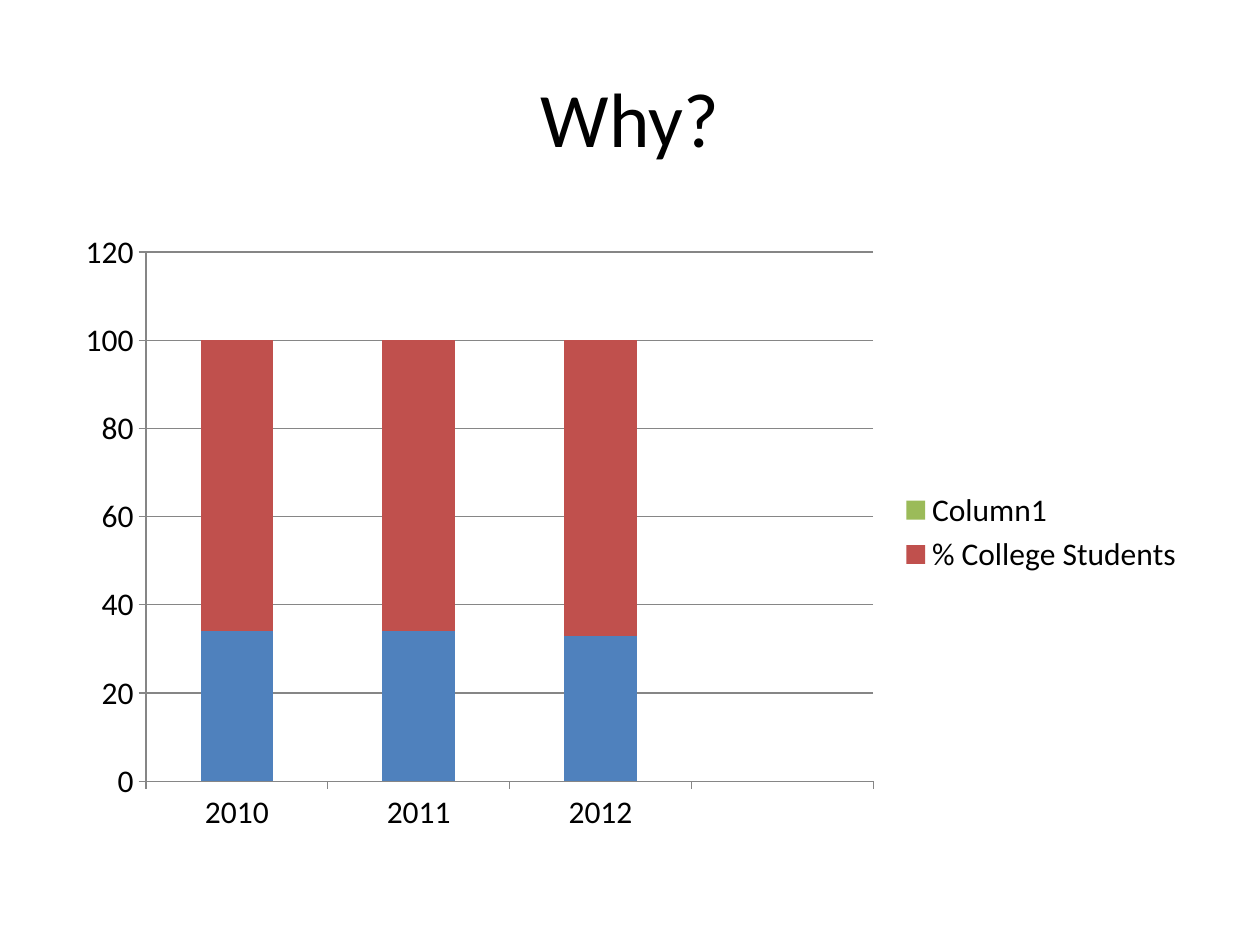
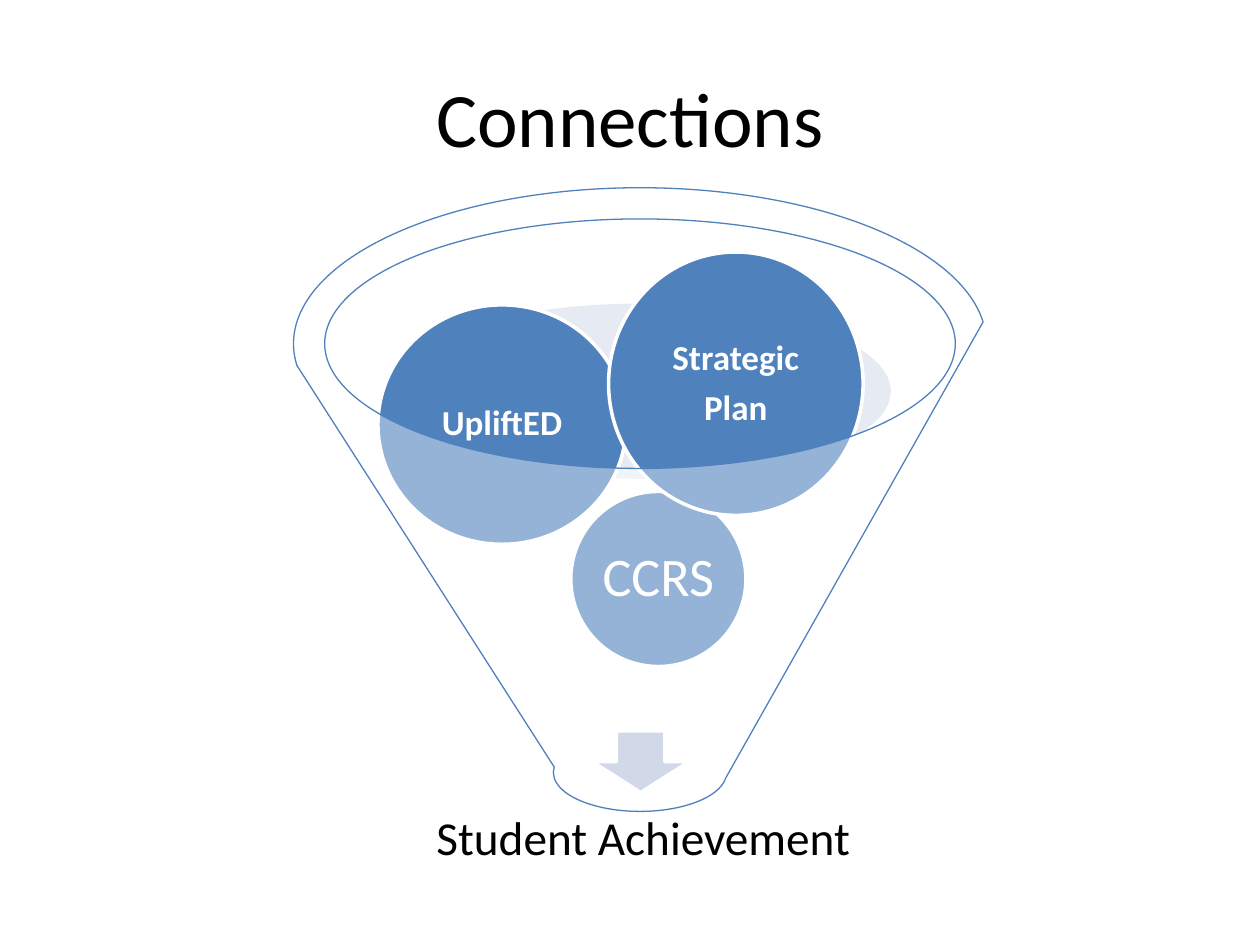
"""Build two slides: a stacked column chart and a funnel of connected initiatives."""
from dataclasses import dataclass

from lxml.etree import SubElement
from pptx import Presentation
from pptx.chart.data import CategoryChartData
from pptx.dml.color import RGBColor
from pptx.enum.chart import XL_CHART_TYPE, XL_LEGEND_POSITION, XL_TICK_MARK
from pptx.enum.shapes import MSO_SHAPE
from pptx.enum.text import MSO_ANCHOR, PP_ALIGN
from pptx.oxml import parse_xml
from pptx.oxml.ns import nsdecls, qn
from pptx.util import Inches, Pt


@dataclass(frozen=True)
class Theme:
    font: str = "Calibri"
    black: RGBColor = RGBColor(0x00, 0x00, 0x00)
    white: RGBColor = RGBColor(0xFF, 0xFF, 0xFF)
    blue: RGBColor = RGBColor(0x4F, 0x81, 0xBD)
    red: RGBColor = RGBColor(0xC0, 0x50, 0x4D)
    green: RGBColor = RGBColor(0x9B, 0xBB, 0x59)
    axis: RGBColor = RGBColor(0x86, 0x86, 0x86)
    arrow: RGBColor = RGBColor(0xB3, 0xC1, 0xDB)
    rim: RGBColor = RGBColor(0xC2, 0xCD, 0xE1)
    title_size: int = 44
    chart_size: int = 18
    acronym_size: int = 31
    outcome_size: int = 27
    initiative_size: int = 20


theme = Theme()


def write(shape, lines, size, color, bold=False, spacing=0.9):
    frame = shape.text_frame
    frame.text = "\n".join(lines)
    frame.word_wrap = False
    frame.vertical_anchor = MSO_ANCHOR.MIDDLE
    for paragraph in frame.paragraphs:
        paragraph.alignment = PP_ALIGN.CENTER
        paragraph.line_spacing = spacing
        paragraph.font.name = theme.font
        paragraph.font.size = Pt(size)
        paragraph.font.bold = bold
        paragraph.font.color.rgb = color
    for paragraph in frame.paragraphs[:-1]:
        paragraph.space_after = Pt(0.35 * size)


def add_part(slide, preset, box, fill, line=None, width=2, opacity=None):
    part = slide.shapes.add_shape(preset, *map(Inches, box))
    part.shadow.inherit = False
    part.fill.solid()
    part.fill.fore_color.rgb = fill
    if opacity:
        color = part.fill._xPr.find(qn("a:solidFill"))[0]
        SubElement(color, qn("a:alpha"), val=str(opacity * 1000))
    if line is None:
        part.line.fill.background()
    else:
        part.line.color.rgb = line
        part.line.width = Pt(width)
    return part


presentation = Presentation()
presentation.slide_width = Inches(10)
presentation.slide_height = Inches(7.5)
blank = presentation.slide_layouts[6]

slides = []
for heading in ("Why?", "Connections"):
    slide = presentation.slides.add_slide(blank)
    title = slide.shapes.add_textbox(Inches(0.5), Inches(0.3), Inches(9), Inches(1.25))
    write(title, [heading], theme.title_size, theme.black, spacing=1.0)
    title.text_frame.word_wrap = True
    slides.append(slide)
why, connections = slides

readiness = CategoryChartData()
readiness.categories = ["2010", "2011", "2012", ""]
readiness.add_series("Series 1", [34, 34, 33, None])
readiness.add_series("% College Students", [66, 66, 67, None])
readiness.add_series("Column1", [None] * 4)
chart = why.shapes.add_chart(
    XL_CHART_TYPE.COLUMN_STACKED, Inches(0.5), Inches(1.75), Inches(9), Inches(4.95), readiness
).chart
chart.has_title = False
chart.font.name = theme.font
chart.font.size = Pt(theme.chart_size)
chart.font.color.rgb = theme.black

columns = chart.plots[0]
columns.vary_by_categories = False
columns.gap_width = 150
columns.overlap = 100
for series, color in zip(columns.series, (theme.blue, theme.red, theme.green)):
    series.format.fill.solid()
    series.format.fill.fore_color.rgb = color

for axis in (chart.category_axis, chart.value_axis):
    axis.major_tick_mark = XL_TICK_MARK.OUTSIDE
    axis.format.line.color.rgb = theme.axis
    axis.format.line.width = Pt(0.75)
percent = chart.value_axis
percent.minimum_scale, percent.maximum_scale, percent.major_unit = 0, 120, 20
percent.has_major_gridlines = True
percent.major_gridlines.format.line.color.rgb = theme.axis
percent.major_gridlines.format.line.width = Pt(0.75)

chart.has_legend = True
chart.legend.position = XL_LEGEND_POSITION.RIGHT
chart.legend.include_in_layout = False
hidden_entry = parse_xml(
    f'<c:legendEntry {nsdecls("c")}><c:idx val="0"/><c:delete val="1"/></c:legendEntry>'
)
chart.legend._element.find(qn("c:legendPos")).addnext(hidden_entry)

add_part(connections, MSO_SHAPE.OVAL, (3.08, 2.41, 3.99, 1.39), theme.rim, opacity=40)
add_part(connections, MSO_SHAPE.DOWN_ARROW, (4.7, 5.8, 0.77, 0.49), theme.arrow, theme.white)

outcome = connections.shapes.add_textbox(Inches(3.25), Inches(6.2), Inches(3.71), Inches(0.93))
write(outcome, ["Student Achievement"], theme.outcome_size, theme.black)

initiatives = [
    (["CCRS"], (4.53, 3.9, 1.39, 1.39), theme.acronym_size, False),
    (["UpliftED"], (3, 2.42, 1.97, 1.9), theme.initiative_size, True),
    (["Strategic", "Plan"], (4.83, 2, 2.02, 2.09), theme.initiative_size, True),
]
for lines, box, size, bold in initiatives:
    initiative = add_part(connections, MSO_SHAPE.OVAL, box, theme.blue, theme.white)
    write(initiative, lines, size, theme.white, bold)

add_part(connections, MSO_SHAPE.FUNNEL, (2.33, 1.49, 5.5, 4.95), theme.white,
         theme.blue, width=0.75, opacity=40)

presentation.save("out.pptx")
